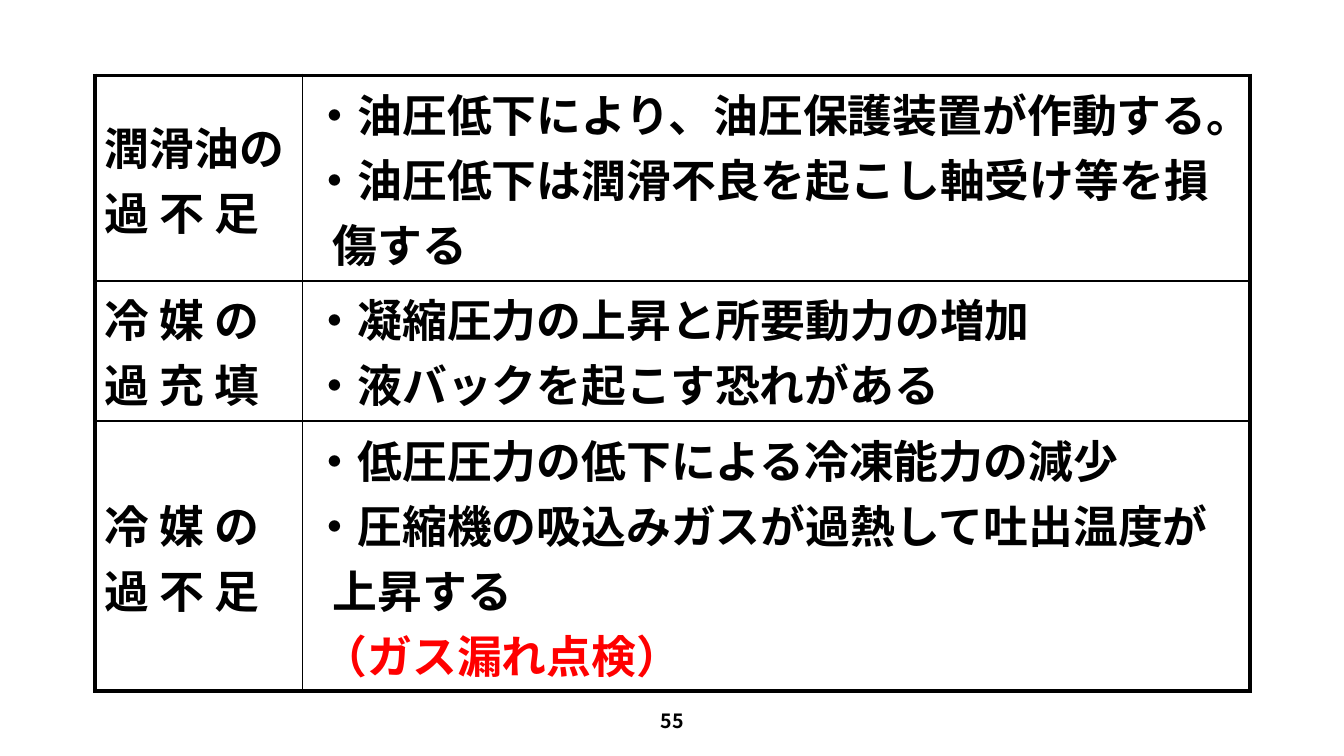
from pptx import Presentation
from pptx.dml.color import RGBColor
from pptx.enum.lang import MSO_LANGUAGE_ID as Lang
from pptx.enum.text import MSO_ANCHOR as Anchor, PP_ALIGN as Align
from pptx.oxml.ns import qn
from pptx.util import Inches, Pt
from lxml.etree import SubElement

COLORS = {"text": "000000", "border": "000000", "warning": "FF0000"}
OUTER, ROW_RULE, COLUMN_RULE = 3, 1.5, 1

# Each effect: text, left indent in inches, colour name
TROUBLES = [
    (["潤滑油の", "過 不 足"],
     [("・油圧低下により、油圧保護装置が作動する。", 0, "text"),
      ("・油圧低下は潤滑不良を起こし軸受け等を損", 0, "text"),
      ("傷する", 0.2, "text")]),
    (["冷 媒 の", "過 充 填"],
     [("・凝縮圧力の上昇と所要動力の増加", 0, "text"),
      ("・液バックを起こす恐れがある", 0, "text")]),
    (["冷 媒 の", "過 不 足"],
     [("・低圧圧力の低下による冷凍能力の減少", 0, "text"),
      ("・圧縮機の吸込みガスが過熱して吐出温度が", 0, "text"),
      ("上昇する", 0.2, "text"),
      ("（ガス漏れ点検）", 0.1, "warning")]),
]


class SlideBuilder:
    font = "Noto Sans CJK JP"

    def __init__(self, slide):
        self.slide = slide

    def fill_text(self, frame, lines, size, align):
        frame.text = "\n".join(text for text, _, _ in lines)
        for paragraph, (_, indent, color) in zip(frame.paragraphs, lines):
            paragraph.alignment = align
            if indent:
                properties = paragraph._p.get_or_add_pPr()
                properties.set("marL", str(Inches(indent)))
                properties.set("indent", "0")
            for run in paragraph.runs:
                font = run.font
                font.size, font.bold, font.name = Pt(size), True, self.font
                font.language_id = Lang.JAPANESE
                font.color.rgb = RGBColor.from_string(COLORS[color])
                SubElement(run._r.get_or_add_rPr(), qn("a:ea"), typeface=self.font)

    def border(self, cell, widths):
        properties = cell._tc.get_or_add_tcPr()
        for side, width in zip("LRTB", widths):
            line = SubElement(properties, qn(f"a:ln{side}"), w=str(Pt(width)))
            fill = SubElement(line, qn("a:solidFill"))
            SubElement(fill, qn("a:srgbClr"), val=COLORS["border"])

    def table(self, left, top, widths, heights, rows):
        grid = self.slide.shapes.add_table(
            len(heights), len(widths), Inches(left), Inches(top),
            Inches(sum(widths)), Inches(sum(heights))).table
        grid.first_row = grid.horz_banding = False
        for column, width in zip(grid.columns, widths):
            column.width = Inches(width)
        last = len(rows) - 1
        for r, (height, (trouble, effects)) in enumerate(zip(heights, rows)):
            grid.rows[r].height = Inches(height)
            above = OUTER if r == 0 else ROW_RULE
            below = OUTER if r == last else ROW_RULE
            labels = [(text, 0, "text") for text in trouble]
            cells = [(labels, Align.JUSTIFY, (OUTER, COLUMN_RULE)),
                     (effects, Align.LEFT, (COLUMN_RULE, OUTER))]
            for c, (lines, align, sides) in enumerate(cells):
                cell = grid.cell(r, c)
                cell.vertical_anchor = Anchor.MIDDLE
                self.border(cell, (*sides, above, below))
                cell.fill.background()
                self.fill_text(cell.text_frame, lines, 32, align)

    def page_number(self, left, top, width, height, number):
        frame = self.slide.shapes.add_textbox(
            Inches(left), Inches(top), Inches(width), Inches(height)).text_frame
        frame.word_wrap = True
        frame.vertical_anchor = Anchor.MIDDLE
        self.fill_text(frame, [(number, 0, "text")], 14, Align.CENTER)


def main():
    deck = Presentation()
    deck.slide_width, deck.slide_height = Inches(13.33), Inches(7.5)
    builder = SlideBuilder(deck.slides.add_slide(deck.slide_layouts[6]))

    # Troubles and their effects
    builder.table(0.94, 0.75, [2.06, 9.4], [1.94, 1.33, 2.54], TROUBLES)

    # Footer
    builder.page_number(4.42, 6.95, 4.5, 0.4, "55")

    deck.save("out.pptx")


if __name__ == "__main__":
    main()
